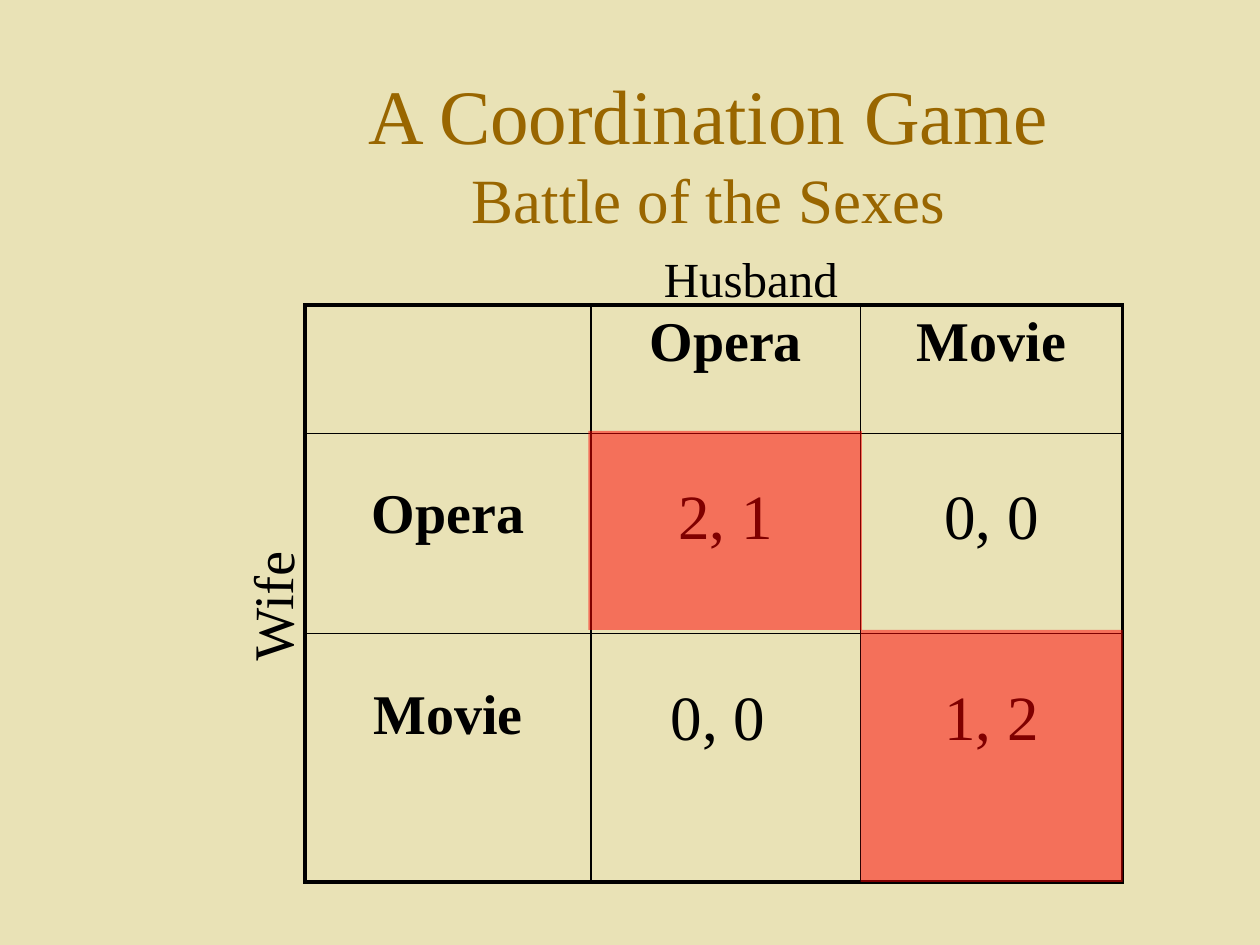
from lxml.etree import SubElement
from pptx import Presentation
from pptx.dml.color import RGBColor
from pptx.enum.shapes import MSO_SHAPE as Shape
from pptx.enum.text import MSO_ANCHOR as Anchor, PP_ALIGN as Align
from pptx.oxml import parse_xml
from pptx.oxml.ns import nsdecls, qn
from pptx.util import Inches, Pt

PAPER, GOLD, INK, RED = "E9E2B6", "996600", "000000", "FF0000"
FONT = "Times New Roman"


def paint(fill, color, alpha=None):
    fill.solid()
    fill.fore_color.rgb = RGBColor.from_string(color)
    if alpha:
        # Transparency sits inside the colour element
        node = fill._xPr.find(qn("a:solidFill"))[0]
        SubElement(node, qn("a:alpha")).set("val", str(alpha * 1000))


def write(para, text, size=32, color=INK, bold=False, align=Align.LEFT):
    para.alignment = align
    run = para.add_run()
    run.text = text
    font = run.font
    font.name, font.size, font.bold = FONT, Pt(size), bold
    font.color.rgb = RGBColor.from_string(color)


def edge(cell, widths):
    props = cell._tc.get_or_add_tcPr()
    for i, (side, width) in enumerate(zip("LRTB", widths)):
        line = parse_xml(
            f'<a:ln{side} {nsdecls("a")} w="{Pt(width)}"><a:solidFill>'
            f'<a:srgbClr val="{INK}"/></a:solidFill></a:ln{side}>')
        props.insert(i, line)


class Deck:
    def __init__(self):
        self.prs = Presentation()
        self.prs.slide_width, self.prs.slide_height = Inches(10), Inches(7.5)
        self.slide = self.prs.slides.add_slide(self.prs.slide_layouts[6])
        paint(self.slide.background.fill, PAPER)

    def text(self, box, lines, anchor=Anchor.TOP, turn=0, **style):
        shape = self.slide.shapes.add_textbox(*map(Inches, box))
        shape.rotation = turn
        frame = shape.text_frame
        frame.word_wrap, frame.vertical_anchor = True, anchor
        para = frame.paragraphs[0]
        for i, (text, size) in enumerate(lines):
            if i:
                para.add_line_break()
            write(para, text, size=size, **style)

    def grid(self, box, cols, rows, data):
        table = self.slide.shapes.add_table(
            len(rows), len(cols), *map(Inches, box)).table
        table.first_row = table.horz_banding = False
        for col, width in zip(table.columns, cols):
            col.width = Inches(width)
        for row, height in zip(table.rows, rows):
            row.height = Inches(height)
        for r, line in enumerate(data):
            for c, text in enumerate(line):
                self.cell(table.cell(r, c), text, r, c,
                          (c == 0, c == len(cols) - 1,
                           r == 0, r == len(rows) - 1))

    def cell(self, cell, text, r, c, outer):
        head = r == 0 or c == 0
        cell.margin_left = cell.margin_right = Inches(0.1)
        cell.margin_top = cell.margin_bottom = Inches(0.4 if r else 0.05)
        if text:
            write(cell.text_frame.paragraphs[0], text,
                  size=32 if head else 36, bold=head, align=Align.CENTER)
        if head:
            cell.fill.background()
        else:
            paint(cell.fill, PAPER)
        edge(cell, [2.25 if out else 1 for out in outer])

    def tint(self, box):
        shape = self.slide.shapes.add_shape(
            Shape.RECTANGLE, *map(Inches, box))
        shape.shadow.inherit = False
        shape.line.fill.background()
        paint(shape.fill, RED, alpha=50)


def main():
    deck = Deck()

    # Title
    deck.text((1.5, 0.58, 8.25, 1.25),
              [("A Coordination Game", 44), ("Battle of the Sexes", 36)],
              anchor=Anchor.MIDDLE, color=GOLD, align=Align.CENTER)

    # Payoff table
    deck.grid((2.42, 2.42, 6.5, 4.58), (2.27, 2.14, 2.08), (1.02, 1.59, 1.97),
              [("", "Opera", "Movie"),
               ("Opera", "2, 1", "0, 0"),
               ("Movie", "0, 0 ", "1, 2")])

    # Players
    deck.text((1.11, 3.98, 2.1, 0.63), [("Wife", 32)],
              anchor=Anchor.MIDDLE, turn=270.6)
    deck.text((5.17, 1.92, 1.85, 0.57), [("Husband", 28)])

    # Equilibria
    deck.tint((4.67, 3.42, 2.17, 1.58))
    deck.tint((6.83, 5, 2.08, 2))

    deck.prs.save("out.pptx")


if __name__ == "__main__":
    main()
